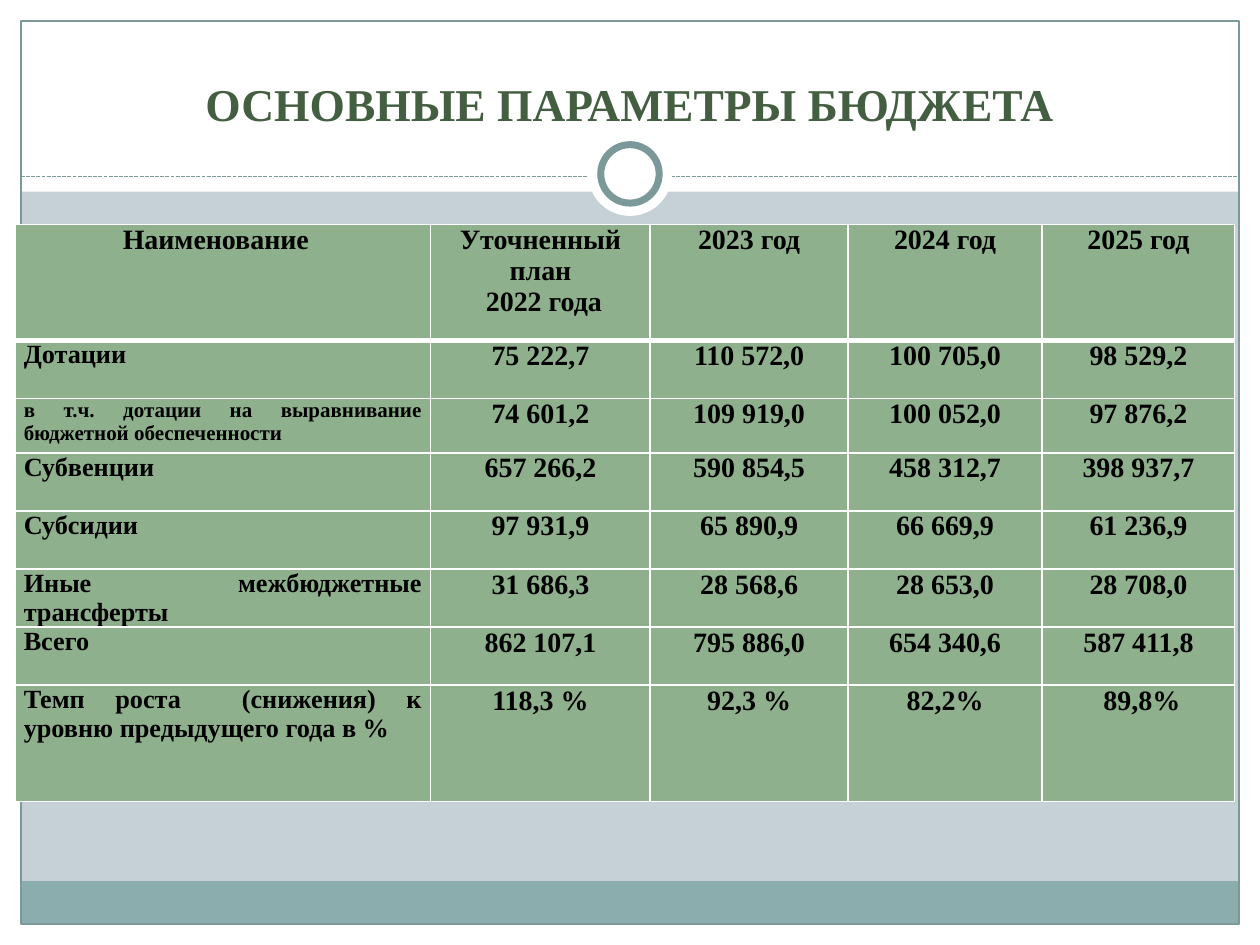
from lxml import etree
from pptx import Presentation
from pptx.dml.color import RGBColor
from pptx.enum.dml import MSO_LINE
from pptx.enum.shapes import MSO_CONNECTOR, MSO_SHAPE
from pptx.enum.text import MSO_ANCHOR, PP_ALIGN
from pptx.oxml.ns import qn
from pptx.util import Pt

RECT, OVAL = MSO_SHAPE.RECTANGLE, MSO_SHAPE.OVAL
STRAIGHT = MSO_CONNECTOR.STRAIGHT
DASH = MSO_LINE.SQUARE_DOT
CENTER, JUSTIFY = PP_ALIGN.CENTER, PP_ALIGN.JUSTIFY
BOTTOM = MSO_ANCHOR.BOTTOM

FONT = "Times New Roman"
WHITE, TEAL, BAND = "FFFFFF", "7C999A", "8CADAE"
BACK, GREEN, CELL, BLACK = "C5D1D7", "435E40", "8FB08C", "000000"
WIDE, HIGH, EDGE = 720, 540, 12

COLS = [237.5, 125.5, 113, 111, 110]
ROWS = [66.4, 33.2, 31, 33.2, 33.2, 33.2, 33.2, 66.4]
DATA = [
    ["Наименование  ", "Уточненный план\n 2022 года", "2023 год", "2024 год", "2025 год"],
    ["Дотации", "75 222,7", "110 572,0", "100 705,0", "98 529,2"],
    ["в т.ч. дотации на выравнивание бюджетной обеспеченности",
     "74 601,2", "109 919,0", "100 052,0", "97 876,2"],
    ["Субвенции", "657 266,2", "590 854,5", "458 312,7", "398 937,7"],
    ["Субсидии ", "97 931,9", "65 890,9", "66 669,9", "61 236,9"],
    ["Иные межбюджетные трансферты", "31 686,3", "28 568,6", "28 653,0", "28 708,0"],
    ["Всего ", "862 107,1", "795 886,0", "654 340,6", "587 411,8"],
    ["Темп роста  (снижения) к уровню предыдущего года в %",
     "118,3 %", "92,3 %", "82,2%", " 89,8%"],
]
SUBROW = 2


def rgb(code):
    return RGBColor.from_string(code)


def style(frame, size, color, align):
    for para in frame.paragraphs:
        para.alignment = align
        for run in para.runs:
            font = run.font
            font.name, font.size, font.bold = FONT, Pt(size), True
            font.color.rgb = rgb(color)


def add_shape(slide, kind, box, fill=None, line=None, width=0.75):
    shape = slide.shapes.add_shape(kind, *map(Pt, box))
    shape.shadow.inherit = False
    if fill:
        shape.fill.solid()
        shape.fill.fore_color.rgb = rgb(fill)
    else:
        shape.fill.background()
    if line:
        shape.line.color.rgb = rgb(line)
        shape.line.width = Pt(width)
    else:
        shape.line.fill.background()


def add_ring(slide, x, y, size, **look):
    """Place a circle by its centre."""
    add_shape(slide, OVAL, (x - size / 2, y - size / 2, size, size), WHITE, **look)


def add_rule(slide, y):
    rule = slide.shapes.add_connector(
        STRAIGHT, Pt(EDGE), Pt(y), Pt(WIDE - EDGE), Pt(y))
    rule.line.color.rgb = rgb(TEAL)
    rule.line.width = Pt(0.75)
    rule.line.dash_style = DASH
    etree.SubElement(rule.element.spPr, qn("a:effectLst"))


def add_frame(slide):
    inner = WIDE - 2 * EDGE
    for box in [(0, HIGH - EDGE, WIDE, EDGE), (0, 0, WIDE, 109.5),
                (0, 0, EDGE, HIGH), (WIDE - EDGE, 0, EDGE, HIGH)]:
        add_shape(slide, RECT, box, WHITE)
    add_shape(slide, RECT, (EDGE, 503.5, inner, 24.5), BAND)
    add_shape(slide, RECT, (EDGE, EDGE, inner, HIGH - 2 * EDGE), line=TEAL)
    add_rule(slide, 100.8)
    add_ring(slide, WIDE / 2, 99.4, 48)
    add_ring(slide, WIDE / 2, 99.4, 33.4, line=TEAL, width=4)


def set_title(slide, text):
    title = slide.shapes.title
    title.left, title.top, title.width, title.height = map(Pt, (24, 18, 672, 60))
    frame = title.text_frame
    frame.text = text
    frame.vertical_anchor = BOTTOM
    style(frame, 26, GREEN, CENTER)
    # The title must lie above the white bands.
    title.element.getparent().append(title.element)


def set_edges(cell, widths):
    """Draw white borders; widths maps a side (L, R, T, B) to points."""
    props = cell._tc.get_or_add_tcPr()
    for spot, side in enumerate("LRTB"):
        edge = etree.Element(qn(f"a:ln{side}"), w=str(Pt(widths[side])))
        fill = etree.SubElement(edge, qn("a:solidFill"))
        etree.SubElement(fill, qn("a:srgbClr"), val=WHITE)
        props.insert(spot, edge)


def fill_cell(cell, text, size, align, widths):
    cell.margin_left = cell.margin_right = Pt(5)
    cell.margin_top = cell.margin_bottom = 0
    cell.text_frame.text = text
    style(cell.text_frame, size, BLACK, align)
    cell.fill.solid()
    cell.fill.fore_color.rgb = rgb(CELL)
    set_edges(cell, widths)


def add_table(slide):
    table = slide.shapes.add_table(
        len(ROWS), len(COLS), Pt(8.6), Pt(128.2), Pt(sum(COLS)), Pt(sum(ROWS))).table
    for col, width in zip(table.columns, COLS):
        col.width = Pt(width)
    for r, (row, height) in enumerate(zip(DATA, ROWS)):
        table.rows[r].height = Pt(height)
        widths = {"L": 1, "R": 1, "T": 3 if r == 1 else 1, "B": 3 if r == 0 else 1}
        for c, text in enumerate(row):
            size, align = 16, CENTER
            if c == 0 and r > 0:
                size, align = 12 if r == SUBROW else 15, JUSTIFY
            fill_cell(table.cell(r, c), text, size, align, widths)


def main():
    deck = Presentation()
    deck.slide_width, deck.slide_height = Pt(WIDE), Pt(HIGH)
    slide = deck.slides.add_slide(deck.slide_layouts[5])
    back = slide.background.fill
    back.solid()
    back.fore_color.rgb = rgb(BACK)
    add_frame(slide)
    set_title(slide, "ОСНОВНЫЕ ПАРАМЕТРЫ БЮДЖЕТА")
    add_table(slide)
    deck.save("out.pptx")


if __name__ == "__main__":
    main()
